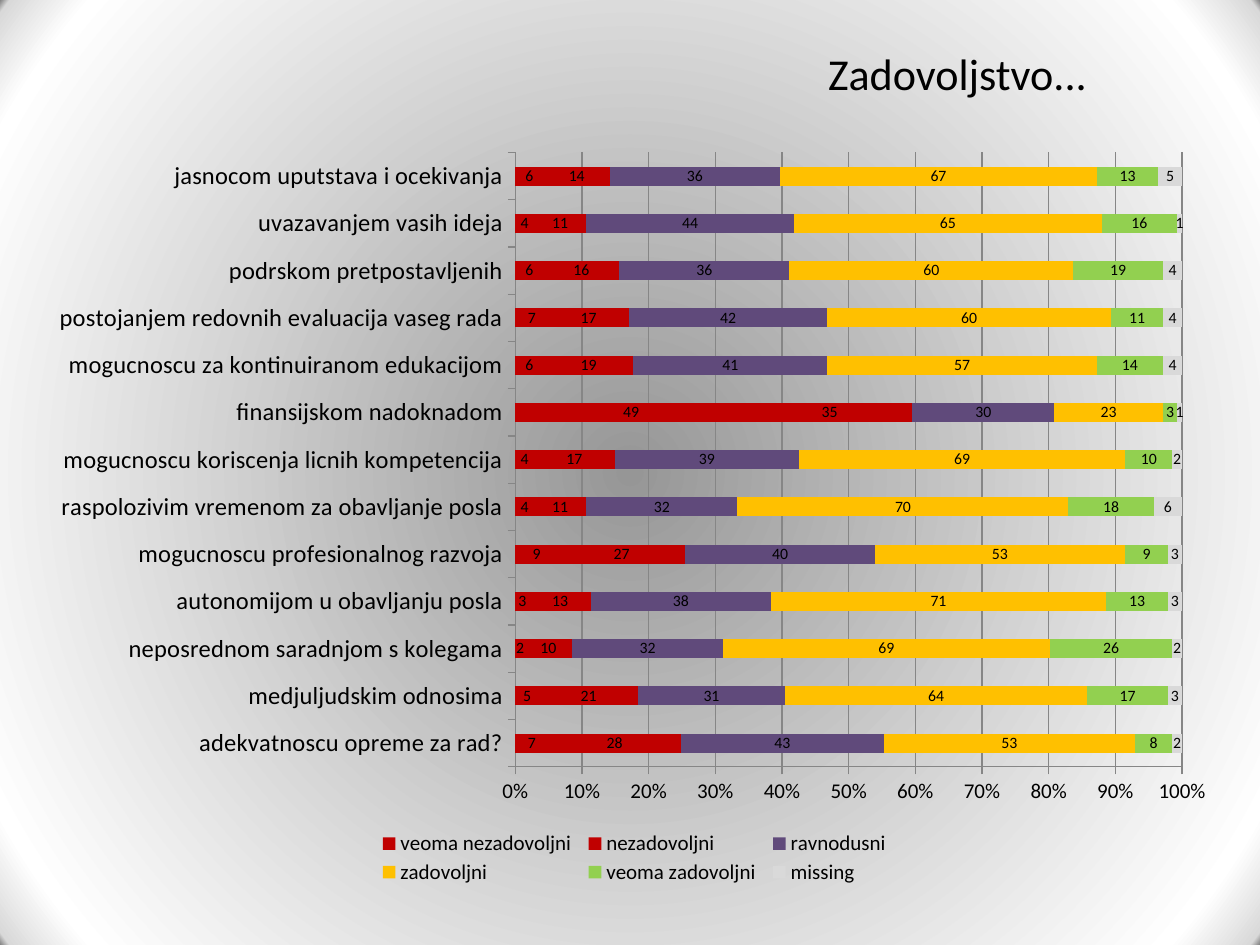
import pptx
import pptx.chart.data
import pptx.dml.color
import pptx.enum.chart
import pptx.enum.text
import pptx.oxml
import pptx.oxml.ns
import pptx.util
from pptx.util import Inches

COLORS = {
    "text": "000000", "grid": "868686",
    "red": "C00000", "purple": "604A7B", "amber": "FFC000",
    "green": "92D050", "gray": "D9D9D9",
}
BACKDROP = [(0, "969696"), (91, "FFFFFF"), (99, "D9D9D9"), (100, "808080")]

SERIES = [
    ("veoma nezadovoljni", "red"), ("nezadovoljni", "red"),
    ("ravnodusni", "purple"), ("zadovoljni", "amber"),
    ("veoma zadovoljni", "green"), ("missing", "gray"),
]
ANSWERS = {
    "adekvatnoscu opreme za rad?": (7, 28, 43, 53, 8, 2),
    "medjuljudskim odnosima": (5, 21, 31, 64, 17, 3),
    "neposrednom saradnjom s kolegama": (2, 10, 32, 69, 26, 2),
    "autonomijom u obavljanju posla": (3, 13, 38, 71, 13, 3),
    "mogucnoscu profesionalnog razvoja": (9, 27, 40, 53, 9, 3),
    "raspolozivim vremenom za obavljanje posla": (4, 11, 32, 70, 18, 6),
    "mogucnoscu koriscenja licnih kompetencija": (4, 17, 39, 69, 10, 2),
    "finansijskom nadoknadom": (49, 35, 30, 23, 3, 1),
    "mogucnoscu za kontinuiranom edukacijom": (6, 19, 41, 57, 14, 4),
    "postojanjem redovnih evaluacija vaseg rada": (7, 17, 42, 60, 11, 4),
    "podrskom pretpostavljenih": (6, 16, 36, 60, 19, 4),
    "uvazavanjem vasih ideja": (4, 11, 44, 65, 16, 1),
    "jasnocom uputstava i ocekivanja": (6, 14, 36, 67, 13, 5),
}


class SlideBuilder:
    font_name = "Calibri"

    def __init__(self, page):
        self.page = page

    def color(self, name):
        return pptx.dml.color.RGBColor.from_string(COLORS[name])

    def style_font(self, font, size):
        font.name = self.font_name
        font.size = pptx.util.Pt(size)
        font.bold = False
        font.color.rgb = self.color("text")

    def radial_background(self, stops):
        self.page.background.fill.solid()
        solid = self.page.element.xpath(".//p:bgPr/a:solidFill")[0]
        stop_xml = "".join(
            f'<a:gs pos="{place * 1000}"><a:srgbClr val="{value}"/></a:gs>'
            for place, value in stops)
        gradient = pptx.oxml.parse_xml(
            f'<a:gradFill {pptx.oxml.ns.nsdecls("a")} rotWithShape="1">'
            f'<a:gsLst>{stop_xml}</a:gsLst><a:path path="circle">'
            '<a:fillToRect l="50000" t="50000" r="50000" b="50000"/>'
            '</a:path></a:gradFill>')
        solid.getparent().replace(solid, gradient)

    def title(self, text, left, top, width, height, size):
        box = self.page.shapes.add_textbox(
            Inches(left), Inches(top), Inches(width), Inches(height))
        frame = box.text_frame
        frame.word_wrap = True
        frame.vertical_anchor = pptx.enum.text.MSO_ANCHOR.MIDDLE
        frame.text = text
        para = frame.paragraphs[0]
        para.alignment = pptx.enum.text.PP_ALIGN.CENTER
        self.style_font(para.runs[0].font, size)

    def place_part(self, part, left, top, width, height, inner=False):
        for old in part.xpath("c:layout"):
            part.remove(old)
        target = '<c:layoutTarget val="inner"/>' if inner else ""
        layout = pptx.oxml.parse_xml(
            f'<c:layout {pptx.oxml.ns.nsdecls("c")}><c:manualLayout>{target}'
            '<c:xMode val="edge"/><c:yMode val="edge"/>'
            f'<c:x val="{left}"/><c:y val="{top}"/>'
            f'<c:w val="{width}"/><c:h val="{height}"/>'
            '</c:manualLayout></c:layout>')
        if inner:
            part.insert(0, layout)
        else:
            part.xpath("c:legendPos")[0].addnext(layout)

    def line(self, line_format):
        line_format.color.rgb = self.color("grid")
        line_format.width = pptx.util.Pt(0.75)

    def axis(self, axis, size):
        axis.major_tick_mark = pptx.enum.chart.XL_TICK_MARK.OUTSIDE
        axis.minor_tick_mark = pptx.enum.chart.XL_TICK_MARK.NONE
        self.style_font(axis.tick_labels.font, size)
        self.line(axis.format.line)

    def stacked_bars(self, answers, series, left, top, width, height):
        data = pptx.chart.data.CategoryChartData()
        data.categories = list(answers)
        for (name, _), values in zip(series, zip(*answers.values())):
            data.add_series(name, values)
        chart = self.page.shapes.add_chart(
            pptx.enum.chart.XL_CHART_TYPE.BAR_STACKED_100,
            Inches(left), Inches(top), Inches(width), Inches(height), data).chart
        chart.has_title = False
        self.style_font(chart.font, 18)

        plot = chart.plots[0]
        plot.gap_width = 150
        plot.overlap = 100
        plot.vary_by_categories = False
        for bars, (_, color_name) in zip(plot.series, series):
            bars.format.fill.solid()
            bars.format.fill.fore_color.rgb = self.color(color_name)
            bars.data_labels.show_value = True
            self.style_font(bars.data_labels.font, 9)

        self.axis(chart.category_axis, 14)
        self.axis(chart.value_axis, 12)
        chart.value_axis.has_major_gridlines = True
        self.line(chart.value_axis.major_gridlines.format.line)
        chart.value_axis.tick_labels.number_format = "0%"
        chart.value_axis.tick_labels.number_format_is_linked = False

        chart.has_legend = True
        chart.legend.position = pptx.enum.chart.XL_LEGEND_POSITION.BOTTOM
        chart.legend.include_in_layout = False
        self.style_font(chart.legend.font, 12)
        root = chart.element
        self.place_part(root.xpath(".//c:plotArea")[0], 0.4, 0.02, 0.56, 0.81, True)
        self.place_part(root.xpath(".//c:legend")[0], 0.28, 0.91, 0.44, 0.08)


def main():
    deck = pptx.Presentation()
    deck.slide_width = Inches(10)
    deck.slide_height = Inches(7.5)
    builder = SlideBuilder(deck.slides.add_slide(deck.slide_layouts[6]))
    builder.radial_background(BACKDROP)
    builder.title("Zadovoljstvo...", 5.7, 0.3, 3.8, 0.56, 25.2)
    builder.stacked_bars(ANSWERS, SERIES, 0.31, 1.09, 9.45, 6.02)
    deck.save("out.pptx")


if __name__ == "__main__":
    main()
